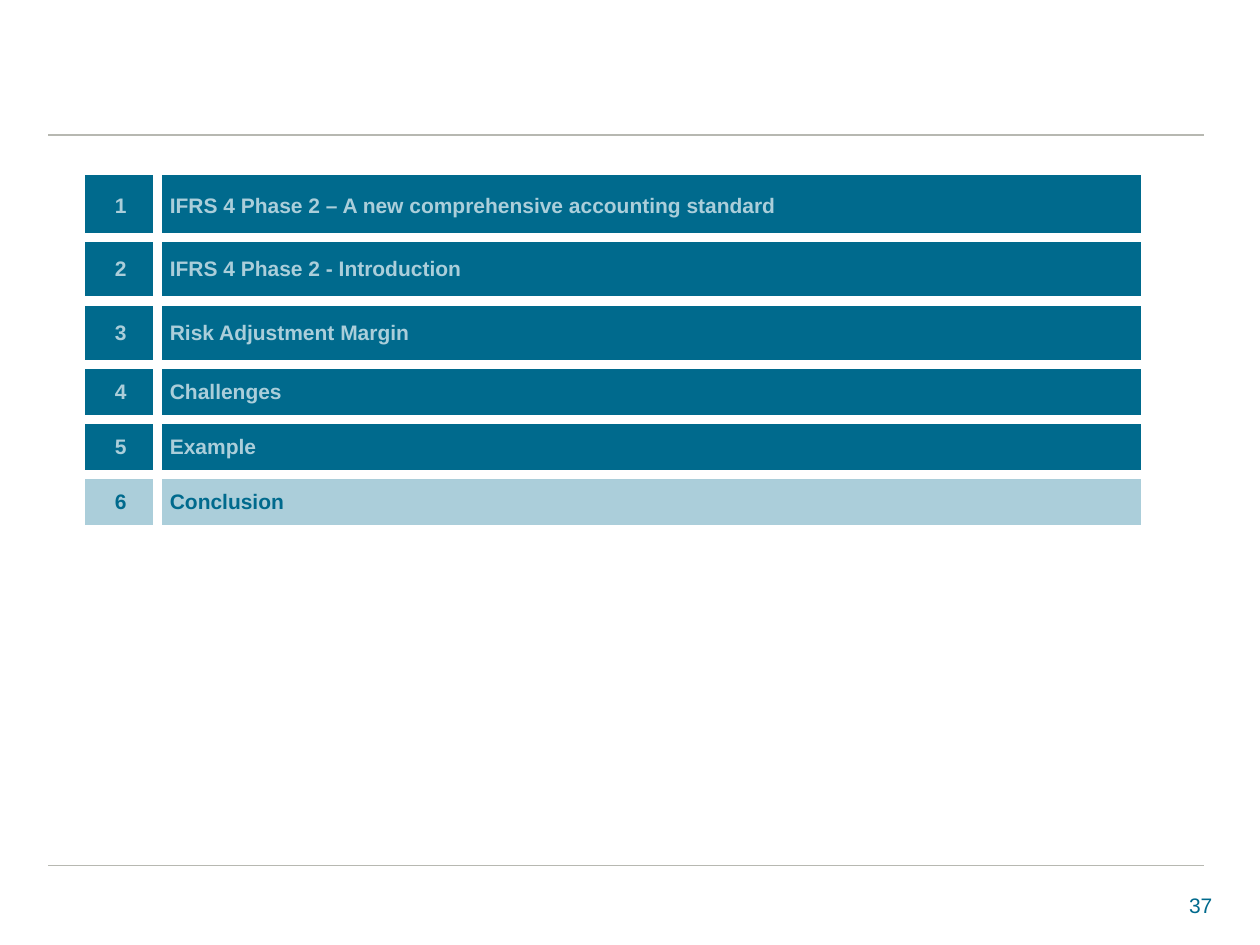
from dataclasses import dataclass

from lxml import etree
from pptx import Presentation
from pptx.dml.color import RGBColor
from pptx.enum.shapes import MSO_CONNECTOR
from pptx.enum.text import MSO_ANCHOR, PP_ALIGN
from pptx.oxml.ns import qn
from pptx.util import Cm, Pt

STRAIGHT = MSO_CONNECTOR.STRAIGHT
MIDDLE = MSO_ANCHOR.MIDDLE
LEFT, CENTER, RIGHT = PP_ALIGN.LEFT, PP_ALIGN.CENTER, PP_ALIGN.RIGHT


@dataclass(frozen=True)
class Theme:
    font: str = "Arial"
    size: float = 12
    dark: str = "006A8D"
    light: str = "ABCEDA"
    rule: str = "B7B8B1"
    gap: str = "FFFFFF"
    rule_width: float = 0.75
    outer_width: float = 1
    gap_width: float = 6


THEME = Theme()
AGENDA = [
    "IFRS 4 Phase 2 – A new comprehensive accounting standard",
    "IFRS 4 Phase 2 - Introduction",
    "Risk Adjustment Margin",
    "Challenges",
    "Example",
    "Conclusion",
]
ACTIVE = 5  # index of the highlighted section
ROW_HEIGHTS = [1.28] * 3 + [1.11] * 3


def set_text(tf, text, color=THEME.dark, bold=False, align=LEFT, hanging=0):
    p = tf.paragraphs[0]
    p.alignment = align
    if hanging:
        pPr = p._p.get_or_add_pPr()
        pPr.set("marL", str(Cm(hanging)))
        pPr.set("indent", str(-Cm(hanging)))
    r = p.add_run()
    r.text = text
    r.font.name = THEME.font
    r.font.size = Pt(THEME.size)
    r.font.bold = bold
    r.font.color.rgb = RGBColor.from_string(color)


def set_borders(cell, **widths):
    tcPr = cell._tc.get_or_add_tcPr()
    for side in "LRTB":
        ln = etree.SubElement(tcPr, qn(f"a:ln{side}"), w=str(Pt(widths[side])))
        fill = etree.SubElement(ln, qn("a:solidFill"))
        etree.SubElement(fill, qn("a:srgbClr"), val=THEME.gap)


def add_frame(s, left, top, width, height):
    """Rules along the top and bottom of the content area."""
    for y in (top, top + height):
        line = s.shapes.add_connector(
            STRAIGHT, Cm(left), Cm(y), Cm(left + width), Cm(y))
        line.line.color.rgb = RGBColor.from_string(THEME.rule)
        line.line.width = Pt(THEME.rule_width)
        etree.SubElement(line._element.spPr, qn("a:effectLst"))


def add_page_number(s, number, left, top, width, height):
    sp = s.shapes.add_textbox(Cm(left), Cm(top), Cm(width), Cm(height))
    tf = sp.text_frame
    tf.word_wrap = True
    tf.margin_right = 0
    set_text(tf, str(number), align=RIGHT)


def add_agenda(s, items, active, left, top, width, number_width=1.47):
    """Numbered sections, with the active one in reversed colours."""
    shape = s.shapes.add_table(
        len(items), 2, Cm(left), Cm(top), Cm(width), Cm(sum(ROW_HEIGHTS)))
    table = shape.table
    table.first_row = table.horz_banding = False
    table.columns[0].width = Cm(number_width)
    table.columns[1].width = Cm(width - number_width)

    outer, gap = THEME.outer_width, THEME.gap_width
    for i, (item, height) in enumerate(zip(items, ROW_HEIGHTS)):
        table.rows[i].height = Cm(height)
        is_active = i == active
        fill, ink = (THEME.light, THEME.dark) if is_active else (THEME.dark, THEME.light)
        for j, (text, align) in enumerate([(str(i + 1), CENTER), (item, LEFT)]):
            cell = table.cell(i, j)
            set_borders(cell, L=gap if j else outer, R=outer if j else gap,
                        T=gap if i else outer, B=gap)
            cell.fill.solid()
            cell.fill.fore_color.rgb = RGBColor.from_string(fill)
            cell.vertical_anchor = MIDDLE
            set_text(cell.text_frame, text, color=ink, bold=True, align=align,
                     hanging=0 if is_active else 0.97)


def main():
    prs = Presentation()
    prs.slide_width, prs.slide_height = Cm(25.4), Cm(19.05)
    s = prs.slides.add_slide(prs.slide_layouts[6])
    add_frame(s, 0.97, 2.72, 23.31, 14.73)
    add_page_number(s, 37, 18.9, 17.86, 5.54, 0.76)
    add_agenda(s, AGENDA, ACTIVE, 1.7, 3.51, 21.31)
    prs.save("out.pptx")


if __name__ == "__main__":
    main()
